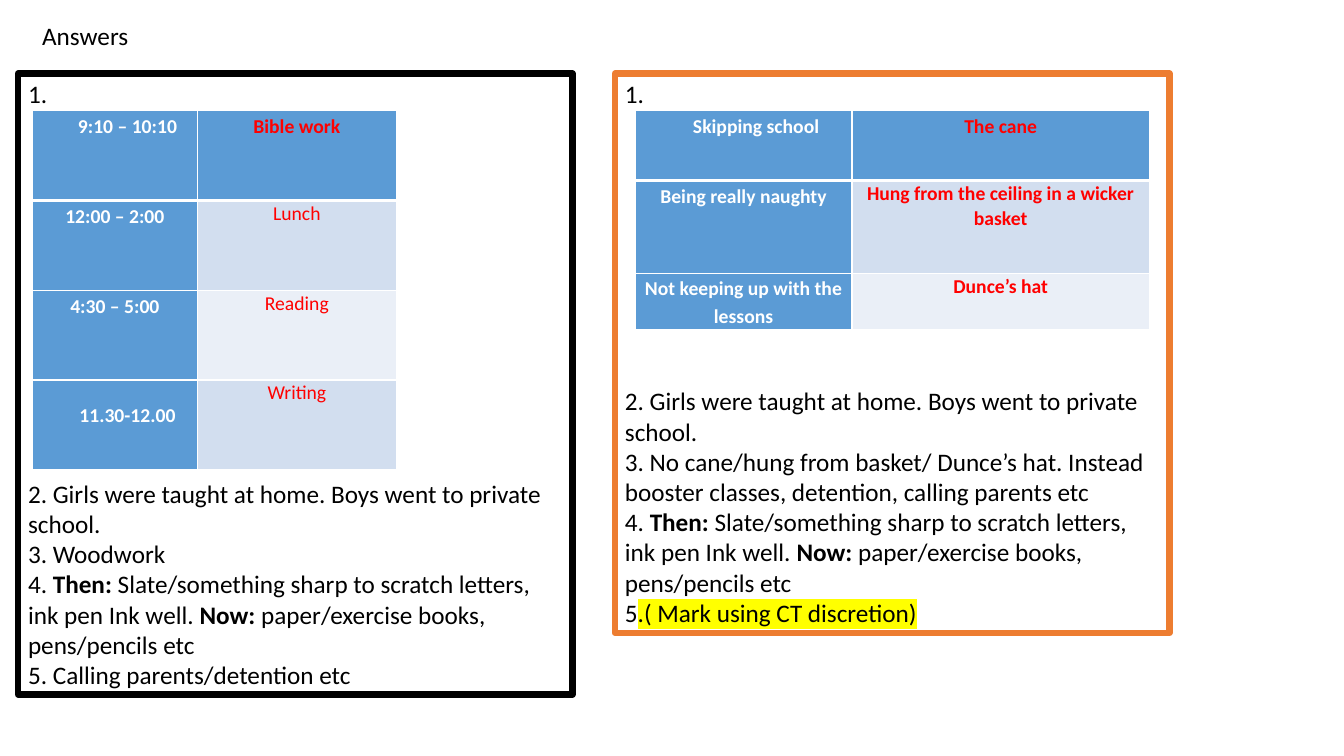
"""Build the school-history answers slide: two framed answer lists, each with a table."""
from dataclasses import dataclass
from typing import Any

from lxml.etree import SubElement
from pptx import Presentation
from pptx.dml.color import RGBColor
from pptx.enum.shapes import MSO_SHAPE
from pptx.enum.text import MSO_ANCHOR, PP_ALIGN
from pptx.oxml.ns import qn
from pptx.slide import Slide
from pptx.table import _Cell
from pptx.text.text import TextFrame, _Paragraph
from pptx.util import Emu, Pt

PX = 9144
BODY_LINE = 21.97
COLORS = {
    "black": "000000", "white": "FFFFFF", "red": "FF0000", "orange": "ED7D31",
    "blue": "5B9BD5", "band_dark": "D2DEEF", "band_light": "EAEFF7", "yellow": "FFFF00",
}
BANDS = ("band_dark", "band_light")
FRAME_FORMAT = {"word_wrap": True, "vertical_anchor": MSO_ANCHOR.TOP}
CELL_FORMAT = {
    "margin_left": Emu(7 * PX), "margin_right": Emu(7 * PX),
    "margin_top": 0, "margin_bottom": 0, "vertical_anchor": MSO_ANCHOR.TOP,
}


@dataclass(frozen=True)
class Run:
    text: str
    bold: bool = False
    highlight: bool = False


@dataclass(frozen=True)
class Entry:
    text: str
    bold: bool = True
    indent: int = 0
    spacing: Any = Pt(20)


@dataclass(frozen=True)
class AnswerTable:
    left: int
    top: int
    columns: tuple[int, ...]
    rows: tuple[int, ...]
    entries: tuple[tuple[Entry, Entry], ...]


@dataclass(frozen=True)
class AnswerPanel:
    left: int
    top: int
    width: int
    height: int
    color: str
    gap_lines: int
    answers: tuple[tuple[Run, ...], ...]
    table: AnswerTable


FIRST = (Run("1."),)
HOME = (Run("2. Girls were taught at home. Boys went to private school."),)
THEN_NOW = (
    Run("4. "), Run("Then: ", bold=True),
    Run("Slate/something sharp to scratch letters, ink pen Ink well."),
    Run(" Now: ", bold=True), Run("paper/exercise books, pens/pencils etc"),
)
PANELS = (
    AnswerPanel(
        18, 73, 550, 616, "black", 12,
        (FIRST, HOME, (Run("3. Woodwork"),), THEN_NOW,
         (Run("5. Calling parents/detention etc"),)),
        AnswerTable(32, 110, (164, 197), (89,) * 4, (
            (Entry("9:10 – 10:10", indent=25), Entry("Bible work")),
            (Entry("12:00 – 2:00"), Entry("Lunch", False, spacing=Pt(18))),
            (Entry("4:30 – 5:00"), Entry("Reading", False, spacing=Pt(18))),
            (Entry("11.30-12.00", indent=25, spacing=2.0),
             Entry("Writing", False, spacing=Pt(18))),
        )),
    ),
    AnswerPanel(
        610, 73, 550, 555, "orange", 9,
        (FIRST, HOME,
         (Run("3. No cane/hung from basket/ Dunce’s hat. Instead booster classes, "
              "detention, calling parents etc"),),
         THEN_NOW,
         (Run("5"), Run(".( Mark using CT discretion)", highlight=True))),
        AnswerTable(630, 110, (215, 295), (69, 92, 55), (
            (Entry("Skipping school", indent=25), Entry("The cane")),
            (Entry("Being really naughty"),
             Entry("Hung from the ceiling in a wicker basket", spacing=Pt(18))),
            (Entry("Not keeping up with the lessons"),
             Entry("Dunce’s hat", spacing=Pt(18))),
        )),
    ),
)


def apply_format(target: Any, values: dict[str, Any]) -> None:
    for name, value in values.items():
        setattr(target, name, value)


def rgb(color: str) -> RGBColor:
    return RGBColor.from_string(COLORS[color])


def add_run(paragraph: _Paragraph, content: Run, size: int, color: str) -> None:
    run = paragraph.add_run()
    run.text = content.text
    apply_format(run.font, {"name": "Calibri", "size": Pt(size), "bold": content.bold})
    run.font.color.rgb = rgb(color)
    if content.highlight:
        properties = run.font._element
        highlight = SubElement(properties, qn("a:highlight"))
        SubElement(highlight, qn("a:srgbClr"), val=COLORS["yellow"])
        properties.find(qn("a:solidFill")).addnext(highlight)


def write_answers(frame: TextFrame, panel: AnswerPanel) -> None:
    for index, answer in enumerate(panel.answers):
        paragraph = frame.add_paragraph() if index else frame.paragraphs[0]
        paragraph.alignment = PP_ALIGN.LEFT
        if index == 1:
            paragraph.space_before = Pt(panel.gap_lines * BODY_LINE)
        for run in answer:
            add_run(paragraph, run, 18, "black")


def add_borders(cell: _Cell, row: int) -> None:
    properties = cell._tc.get_or_add_tcPr()
    widths = {"L": 1, "R": 1, "T": 3 if row == 1 else 1, "B": 3 if row == 0 else 1}
    for side, width in widths.items():
        line = SubElement(properties, qn(f"a:ln{side}"), w=str(Pt(width)))
        fill = SubElement(line, qn("a:solidFill"))
        SubElement(fill, qn("a:srgbClr"), val=COLORS["white"])


def fill_cell(cell: _Cell, entry: Entry, row: int, column: int) -> None:
    apply_format(cell, CELL_FORMAT)
    add_borders(cell, row)
    is_blue = row == 0 or column == 0
    cell.fill.solid()
    cell.fill.fore_color.rgb = rgb("blue" if is_blue else BANDS[(row - 1) % 2])
    paragraph = cell.text_frame.paragraphs[0]
    apply_format(paragraph, {
        "alignment": PP_ALIGN.CENTER, "line_spacing": entry.spacing, "space_after": Pt(12),
    })
    if entry.indent:
        paragraph._p.get_or_add_pPr().set("marL", str(entry.indent * PX))
    add_run(paragraph, Run(entry.text, entry.bold), 14, "red" if column else "white")


def add_answer_table(slide: Slide, content: AnswerTable) -> None:
    bounds = (content.left, content.top, sum(content.columns), sum(content.rows))
    table = slide.shapes.add_table(
        len(content.rows), len(content.columns), *(Emu(value * PX) for value in bounds)
    ).table
    for column, width in zip(table.columns, content.columns):
        column.width = Emu(width * PX)
    for row, height in zip(table.rows, content.rows):
        row.height = Emu(height * PX)
    for row, entries in enumerate(content.entries):
        for column, entry in enumerate(entries):
            fill_cell(table.cell(row, column), entry, row, column)


def add_panel(slide: Slide, panel: AnswerPanel) -> None:
    bounds = (panel.left, panel.top, panel.width, panel.height)
    shape = slide.shapes.add_shape(MSO_SHAPE.RECTANGLE, *(Emu(value * PX) for value in bounds))
    shape.shadow.inherit = False
    shape.fill.background()
    shape.line.color.rgb = rgb(panel.color)
    shape.line.width = Pt(4.5)
    apply_format(shape.text_frame, FRAME_FORMAT)
    write_answers(shape.text_frame, panel)
    add_answer_table(slide, panel.table)


def add_title(slide: Slide) -> None:
    bounds = (32, 15, 106, 40)
    shape = slide.shapes.add_textbox(*(Emu(value * PX) for value in bounds))
    shape.text_frame.word_wrap = False
    add_run(shape.text_frame.paragraphs[0], Run("Answers"), 18, "black")


def main() -> None:
    presentation = Presentation()
    apply_format(presentation, {"slide_width": Emu(1333 * PX), "slide_height": Emu(750 * PX)})
    slide = presentation.slides.add_slide(presentation.slide_layouts[6])
    add_title(slide)
    for panel in PANELS:
        add_panel(slide, panel)
    presentation.save("out.pptx")


if __name__ == "__main__":
    main()
